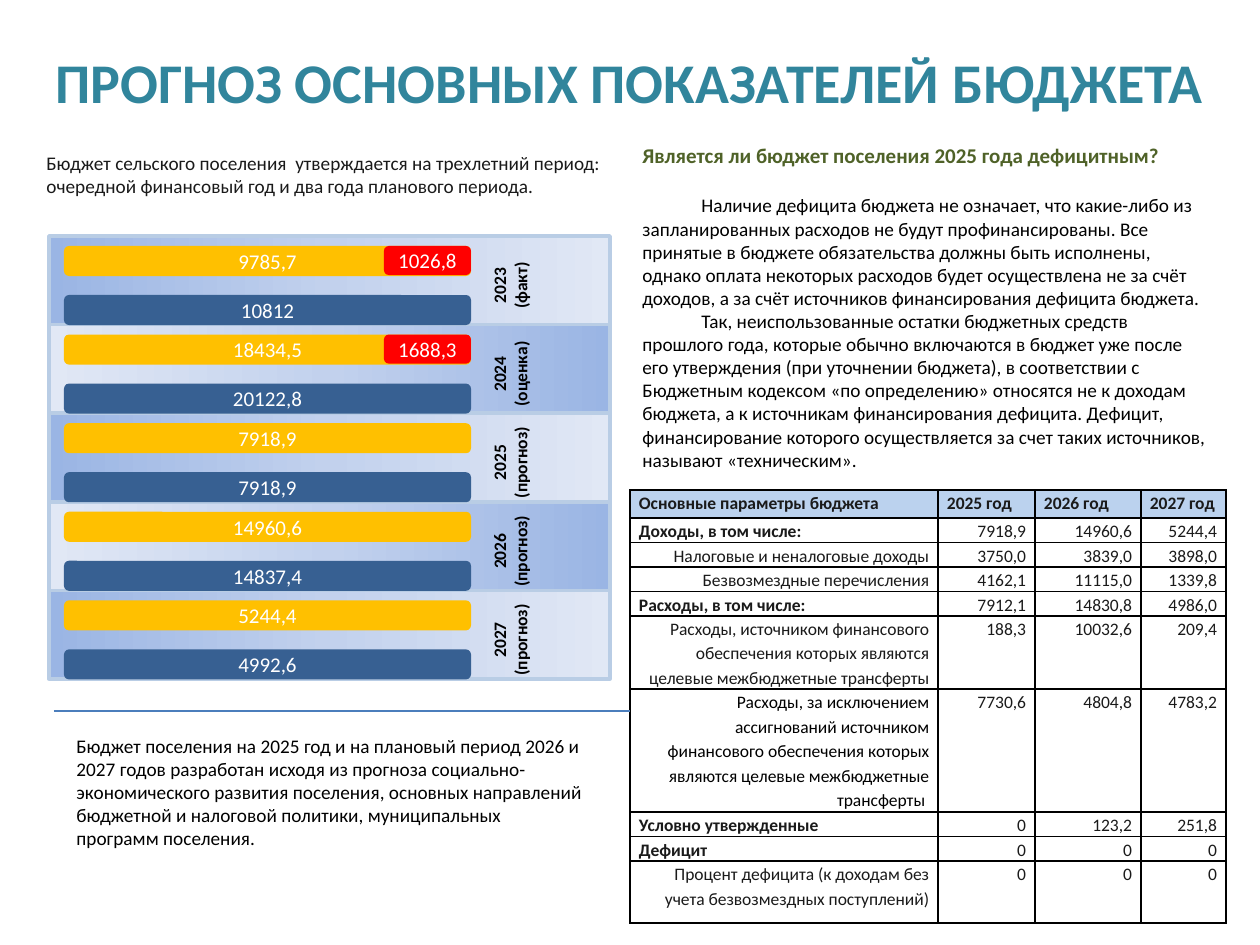
from copy import deepcopy

from lxml import etree
from pptx import Presentation
from pptx.dml.color import RGBColor
from pptx.enum.shapes import MSO_CONNECTOR, MSO_SHAPE
from pptx.enum.text import MSO_ANCHOR, MSO_AUTO_SIZE, PP_ALIGN
from pptx.oxml import parse_xml
from pptx.oxml.ns import nsdecls, qn
from pptx.util import Emu, Pt

RECT, ROUND = MSO_SHAPE.RECTANGLE, MSO_SHAPE.ROUNDED_RECTANGLE
LINE = MSO_CONNECTOR.STRAIGHT
TOP, MIDDLE = MSO_ANCHOR.TOP, MSO_ANCHOR.MIDDLE
GROW = MSO_AUTO_SIZE.SHAPE_TO_FIT_TEXT
LEFT, CENTER, RIGHT, FULL = PP_ALIGN.LEFT, PP_ALIGN.CENTER, PP_ALIGN.RIGHT, PP_ALIGN.JUSTIFY

TEAL = RGBColor(0x31, 0x85, 0x9C)
INK = RGBColor(0x1A, 0x1A, 0x1A)
BLACK = RGBColor(0, 0, 0)
WHITE = RGBColor(0xFF, 0xFF, 0xFF)
GREEN = RGBColor(0x4F, 0x62, 0x28)
GOLD = RGBColor(0xFF, 0xC0, 0)
RED = RGBColor(0xFF, 0, 0)
NAVY = RGBColor(0x37, 0x60, 0x92)
EDGE = RGBColor(0xB9, 0xCD, 0xE5)
RULE = RGBColor(0x4B, 0x7E, 0xBC)
HEAD = RGBColor(0x8E, 0xB4, 0xE3)
SHADES = [(0, RGBColor(0x9A, 0xB5, 0xE4)), (0.5, RGBColor(0xC2, 0xD1, 0xED)),
          (1, RGBColor(0xE1, 0xE8, 0xF5))]

FONT = "Calibri"
PX = 914400 / 126

TITLE = "ПРОГНОЗ ОСНОВНЫХ ПОКАЗАТЕЛЕЙ БЮДЖЕТА"
INTRO = ("Бюджет сельского поселения  утверждается на трехлетний период: "
         "очередной финансовый год и два года планового периода.")
BASIS = ("Бюджет поселения на 2025 год и на плановый период 2026 и 2027 годов разработан "
         "исходя из прогноза социально-экономического развития поселения, основных "
         "направлений бюджетной и налоговой политики, муниципальных программ поселения.")
ASK = "Является ли бюджет поселения 2025 года дефицитным?"
REPLY = [
    "Наличие дефицита бюджета не означает, что какие-либо из запланированных расходов "
    "не будут профинансированы. Все принятые в бюджете обязательства должны быть "
    "исполнены, однако оплата некоторых расходов будет осуществлена не за счёт доходов, "
    "а за счёт источников финансирования дефицита бюджета.",
    "Так, неиспользованные остатки бюджетных средств прошлого года, которые обычно "
    "включаются в бюджет уже после его утверждения (при уточнении бюджета), в "
    "соответствии с Бюджетным кодексом «по определению» относятся не к доходам бюджета, "
    "а к источникам финансирования дефицита. Дефицит, финансирование которого "
    "осуществляется за счет таких источников, называют «техническим».",
]
YEARS = [
    ("2023 (факт)", "9785,7", "1026,8", "10812", 79),
    ("2024 (оценка)", "18434,5", "1688,3", "20122,8", 98),
    ("2025 (прогноз)", "7918,9", None, "7918,9", 98),
    ("2026 (прогноз)", "14960,6", None, "14837,4", 98),
    ("2027 (прогноз)", "5244,4", None, "4992,6", 98),
]
COLS = [308, 97, 106, 85]
ROWS = [
    (28, True, "Основные параметры бюджета", "2025 год", "2026 год", "2027 год"),
    (20, True, "Доходы, в том числе:", "7918,9", "14960,6", "5244,4"),
    (20, False, "Налоговые и неналоговые доходы", "3750,0", "3839,0", "3898,0"),
    (20, False, "Безвозмездные перечисления", "4162,1", "11115,0", "1339,8"),
    (20, True, "Расходы, в том числе:", "7912,1", "14830,8", "4986,0"),
    (62, False, "Расходы, источником финансового обеспечения которых являются целевые "
     "межбюджетные трансферты", "188,3", "10032,6", "209,4"),
    (123, False, "Расходы, за исключением ассигнований источником финансового обеспечения "
     "которых являются целевые межбюджетные трансферты ", "7730,6", "4804,8", "4783,2"),
    (20, True, "Условно утвержденные", "0", "123,2", "251,8"),
    (20, True, "Дефицит", "0", "0", "0"),
    (62, False, "Процент дефицита (к доходам без учета безвозмездных поступлений)",
     "0", "0", "0"),
]


def px(*vals):
    return [Emu(round(v * PX)) for v in vals]


def style(par, size, color, bold=False, align=LEFT):
    par.alignment = align
    for run in par.runs:
        font = run.font
        font.name, font.size, font.bold = FONT, Pt(size), bold
        font.color.rgb = color


def note(slide, box, text, size, color, bold=False, align=LEFT, anchor=MIDDLE):
    shape = slide.shapes.add_textbox(*px(*box))
    frame = shape.text_frame
    frame.word_wrap, frame.auto_size, frame.vertical_anchor = True, GROW, anchor
    frame.text = text
    for par in frame.paragraphs:
        style(par, size, color, bold, align)
    return shape


def heading(slide, box):
    title = slide.shapes.title
    title.left, title.top, title.width, title.height = px(*box)
    title.text_frame.text = TITLE
    title.text_frame.vertical_anchor = MIDDLE
    style(title.text_frame.paragraphs[0], 32, TEAL, True, CENTER)


def answer(slide, box):
    frame = note(slide, box, "\n".join([ASK, *REPLY]), 11, BLACK).text_frame
    first, *rest = frame.paragraphs
    style(first, 12, GREEN, True)
    first.space_after = Pt(14.6)
    for par in rest:
        props = par._p.get_or_add_pPr()
        props.set("marL", "0")
        props.set("indent", str(px(59)[0]))


def band(slide, box, flip):
    shape = slide.shapes.add_shape(RECT, *px(*box))
    shape.shadow.inherit = False
    shape.line.color.rgb, shape.line.width = EDGE, Pt(2)
    fill = shape.fill
    fill.gradient()
    fill.gradient_angle = 180 if flip else 0
    stops = shape._element.spPr.find(".//" + qn("a:gsLst"))
    stops.append(deepcopy(stops[-1]))
    for stop, (pos, color) in zip(fill.gradient_stops, SHADES):
        stop.position, stop.color.rgb = pos, color


def bar(group, box, text, color):
    shape = group.shapes.add_shape(ROUND, *px(*box))
    shape.shadow.inherit = False
    shape.fill.solid()
    shape.fill.fore_color.rgb = color
    shape.line.fill.background()
    frame = shape.text_frame
    frame.margin_top = frame.margin_bottom = 0
    frame.vertical_anchor = MIDDLE
    frame.text = text
    style(frame.paragraphs[0], 12, WHITE, align=CENTER)


def ladder(slide, box):
    x, y, w, h = box
    step = h / len(YEARS)
    tops = [y + i * step for i in range(len(YEARS))]
    for i, top in enumerate(tops):
        band(slide, (x, top, w, step), i % 2)
    for top, (label, income, gap, spend, wide) in zip(tops, YEARS):
        group = slide.shapes.add_group_shape()
        bar(group, (x + 15, top + 10, 407, 30), income, GOLD)
        if gap:
            bar(group, (x + 335, top + 10, 87, 29), gap, RED)
        bar(group, (x + 15, top + 59, 407, 30), spend, NAVY)
        side = note(slide, (x + 461 - wide / 2, top + 22, wide, 55), label,
                    10, BLACK, True, CENTER, TOP)
        side.rotation = 270


def border(cell):
    props = cell._tc.get_or_add_tcPr()
    for i, side in enumerate("LRTB"):
        props.insert(i, parse_xml(
            f'<a:ln{side} {nsdecls("a")} w="12700"><a:solidFill>'
            f'<a:srgbClr val="{BLACK}"/></a:solidFill></a:ln{side}>'))


def budget(slide, box):
    table = slide.shapes.add_table(len(ROWS), len(COLS), *px(*box)).table
    for col, wide in zip(table.columns, px(*COLS)):
        col.width = wide
    for r, (tall, bold, *texts) in enumerate(ROWS):
        table.rows[r].height = px(tall)[0]
        for c, text in enumerate(texts):
            cell = table.cell(r, c)
            cell.margin_left, cell.margin_right = px(9, 9)
            cell.margin_top = cell.margin_bottom = 0
            if r == 0:
                cell.fill.solid()
                cell.fill.fore_color.rgb = HEAD
                tint = cell._tc.tcPr.find(".//" + qn("a:srgbClr"))
                etree.SubElement(tint, qn("a:alpha")).set("val", "60000")
            else:
                cell.fill.background()
            border(cell)
            cell.text_frame.text = text
            par = cell.text_frame.paragraphs[0]
            par.line_spacing = 1.15
            strong = bold and (r == 0 or c == 0)
            color = BLACK if (r, c) == (6, 0) else INK
            style(par, 10, color, strong, FULL if strong else RIGHT)


def rule(slide, x, y, end):
    line = slide.shapes.add_connector(LINE, *px(x, y, end, y))
    line.line.color.rgb, line.line.width = RULE, Pt(1.25)
    etree.SubElement(line._element.spPr, qn("a:effectLst"))


def main():
    deck = Presentation()
    deck.slide_width, deck.slide_height = px(1260, 945)
    slide = deck.slides.add_slide(deck.slide_layouts[5])
    heading(slide, (34, 26, 1191, 110))
    budget(slide, (630, 490, 596, 430))
    note(slide, (34, 145, 596, 59), INTRO, 11, INK)
    note(slide, (64, 727, 536, 130), BASIS, 11, BLACK)
    answer(slide, (630, 135, 596, 344))
    ladder(slide, (49, 236, 561, 443))
    rule(slide, 54, 711, 630)
    deck.save("out.pptx")


if __name__ == "__main__":
    main()
